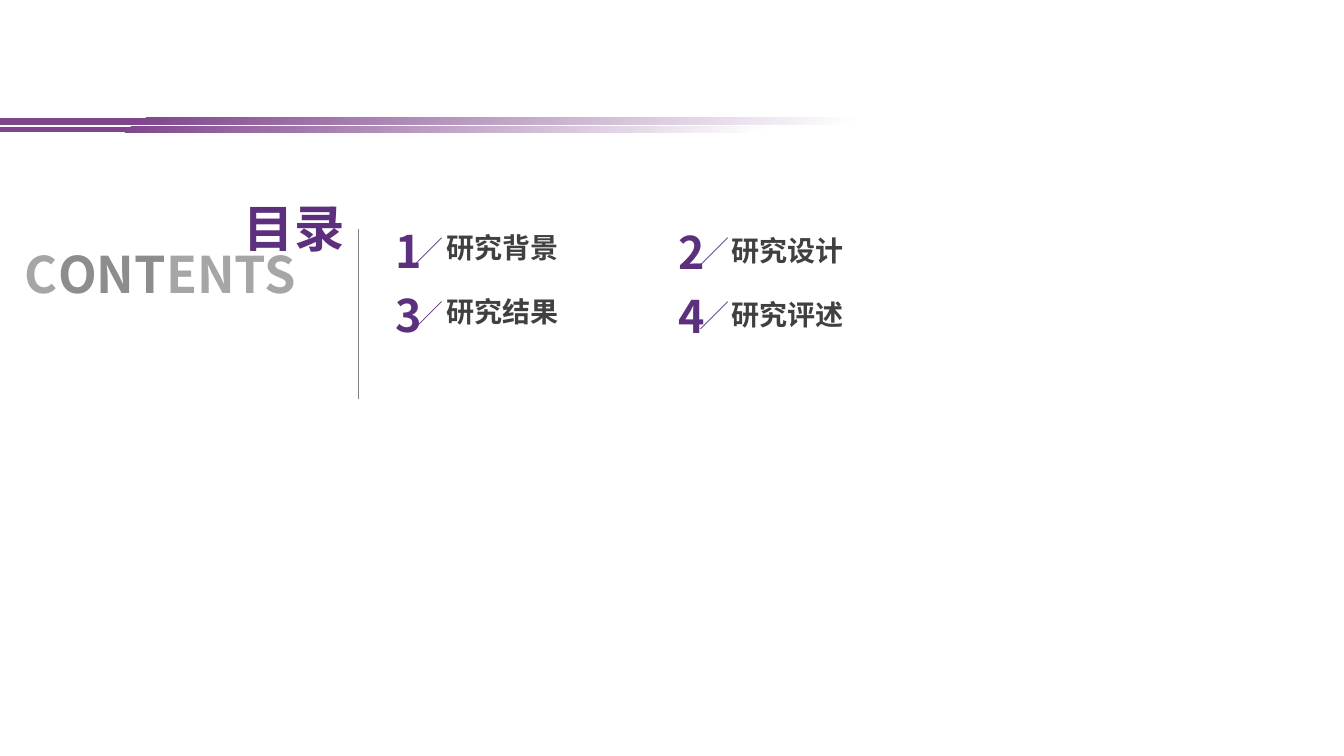
from dataclasses import dataclass

from lxml import etree
from pptx import Presentation
from pptx.dml.color import RGBColor
from pptx.enum.shapes import MSO_CONNECTOR, MSO_SHAPE
from pptx.enum.text import MSO_ANCHOR, MSO_AUTO_SIZE, PP_ALIGN
from pptx.oxml import parse_xml
from pptx.oxml.ns import nsdecls, qn
from pptx.util import Cm, Pt

LEFT, CENTER = PP_ALIGN.LEFT, PP_ALIGN.CENTER
TOP = MSO_ANCHOR.TOP
GROW = MSO_AUTO_SIZE.SHAPE_TO_FIT_TEXT
RECT = MSO_SHAPE.RECTANGLE
STRAIGHT = MSO_CONNECTOR.STRAIGHT
TITLE_ONLY = 5


@dataclass(frozen=True)
class Theme:
    purple: str = "5C307D"
    bar: str = "7F468C"
    white: str = "FFFFFF"
    light: str = "A6A6A6"
    mid: str = "8D8D8D"
    dark: str = "404040"
    rule: str = "808080"
    cjk: str = "Noto Sans CJK SC"
    latin: str = "Arial"
    heading: int = 36
    number: int = 32
    label: int = 20
    hairline: float = 0.5


class Deck:
    def __init__(self, theme):
        self.theme = theme
        self.prs = Presentation()
        self.prs.slide_width, self.prs.slide_height = Cm(33.87), Cm(19.05)
        self.s = self.prs.slides.add_slide(self.prs.slide_layouts[TITLE_ONLY])

    def add_runs(self, sp, runs, size, font, align=LEFT, wrap=False):
        tf = sp.text_frame
        tf.word_wrap = wrap
        tf.auto_size = GROW
        tf.vertical_anchor = TOP
        p = tf.paragraphs[0]
        p.alignment = align
        for text, color in runs:
            r = p.add_run()
            r.text = text
            r.font.size = Pt(size)
            r.font.bold = True
            r.font.name = font
            r.font.color.rgb = RGBColor.from_string(color)
            ea = etree.SubElement(r.font._element, qn("a:ea"))
            ea.set("typeface", self.theme.cjk)

    def title(self, text, x, y, w, h):
        sp = self.s.shapes.title
        sp.left, sp.top, sp.width, sp.height = Cm(x), Cm(y), Cm(w), Cm(h)
        self.add_runs(sp, [(text, self.theme.purple)], self.theme.heading, self.theme.cjk)

    def text(self, runs, x, y, w, h, size, font, **layout):
        sp = self.s.shapes.add_textbox(Cm(x), Cm(y), Cm(w), Cm(h))
        self.add_runs(sp, runs, size, font, **layout)

    def line(self, x1, y1, x2, y2, color):
        sp = self.s.shapes.add_connector(STRAIGHT, Cm(x1), Cm(y1), Cm(x2), Cm(y2))
        sp.line.color.rgb = RGBColor.from_string(color)
        sp.line.width = Pt(self.theme.hairline)
        etree.SubElement(sp._element.spPr, qn("a:effectLst"))

    def fading_bar(self, y, w, h, flipped=False):
        sp = self.s.shapes.add_shape(RECT, 0, Cm(y), Cm(w), Cm(h))
        sp.shadow.inherit = False
        sp.line.fill.background()
        sp.fill.gradient()
        spPr = sp._element.spPr
        if flipped:
            spPr.find(qn("a:xfrm")).set("flipV", "1")
        gradient = parse_xml(
            f'<a:gradFill {nsdecls("a")} rotWithShape="1"><a:gsLst>'
            f'<a:gs pos="0"><a:srgbClr val="{self.theme.white}"/></a:gs>'
            f'<a:gs pos="84000"><a:srgbClr val="{self.theme.bar}"/></a:gs>'
            '</a:gsLst><a:path path="circle">'
            '<a:fillToRect l="100000" t="100000"/></a:path></a:gradFill>')
        spPr.replace(spPr.find(qn("a:gradFill")), gradient)

    def entry(self, number, label, column, drop):
        t = self.theme
        number_x, number_y, label_x, label_y, stroke_x = column
        self.text([(number, t.purple)], number_x, number_y + drop, 1.04, 1.63,
                  t.number, t.cjk, align=CENTER)
        self.text([(label, t.dark)], label_x, label_y + drop, 3.33, 1.12,
                  t.label, t.latin)
        self.line(stroke_x + 0.69, 5.99 + drop, stroke_x, 6.68 + drop, t.purple)


def main():
    theme = Theme()
    deck = Deck(theme)
    deck.fading_bar(2.97, 21.54, 0.18)
    deck.fading_bar(3.2, 19.33, 0.13, flipped=True)

    deck.text([("C", theme.light), ("ONT", theme.mid), ("ENTS", theme.light)],
              0.38, 5.99, 8.69, 1.8, theme.heading, theme.cjk, wrap=True)
    deck.title("目录", 5.89, 4.85, 3.07, 1.8)

    columns = [(9.73, 5.51, 11, 5.69, 10.44), (16.84, 5.54, 18.19, 5.77, 17.65)]
    row_pitch = 1.61
    topics = ["研究背景", "研究设计", "研究结果", "研究评述"]
    for i, topic in enumerate(topics):
        row, col = divmod(i, len(columns))
        deck.entry(str(i + 1), topic, columns[col], row * row_pitch)

    deck.line(9.04, 5.77, 9.04, 10.06, theme.rule)
    deck.prs.save("out.pptx")


if __name__ == "__main__":
    main()
